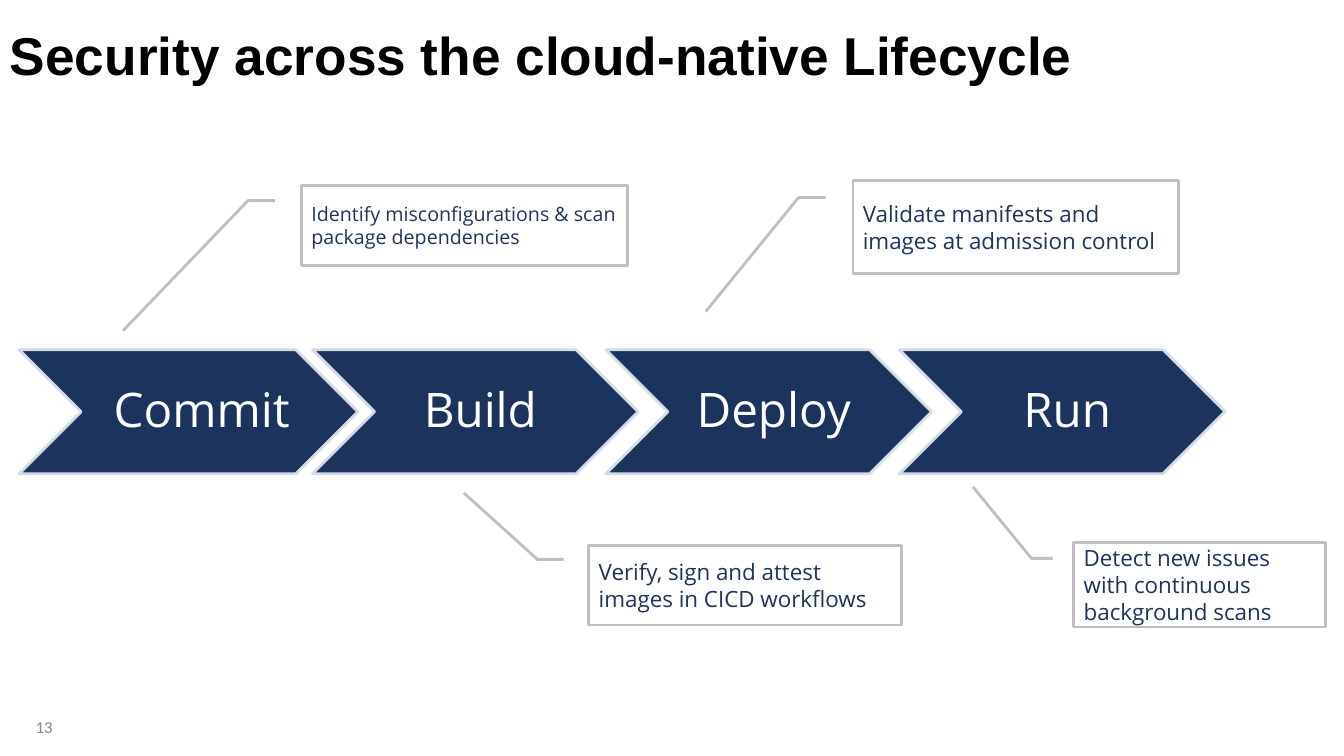
from pptx import Presentation
from pptx.dml.color import RGBColor
from pptx.enum.shapes import MSO_SHAPE
from pptx.enum.text import MSO_ANCHOR, PP_ALIGN
from pptx.util import Inches, Pt

TITLE = "Security across the cloud-native Lifecycle"
PAGE = "13"

# name, left, width, left text margin
STAGES = [
    ("Commit", 0.19, 3.36, 0.31),
    ("Build", 3.1, 3.23, 0.15),
    ("Deploy", 6.01, 3.23, 0.15),
    ("Run", 8.92, 3.23, 0.15),
]
STAGE_TOP, STAGE_HIGH = 3.47, 1.23

# text, size, filled, box (left, top, width, height), leader points
NOTES = [
    ("Identify misconfigurations & scan package dependencies", 14, True,
     (2.99, 1.84, 3.23, 0.79), [(2.73, 1.99), (2.46, 1.99), (1.22, 3.28)]),
    ("Verify, sign and attest images in CICD workflows", 16, False,
     (5.84, 5.41, 3.1, 0.79), [(5.59, 5.55), (5.33, 5.55), (4.6, 4.89)]),
    ("Validate manifests and images at admission control", 16, True,
     (8.46, 1.79, 3.23, 0.92), [(8.19, 1.96), (7.92, 1.96), (7, 3.09)]),
    ("Detect new issues with continuous background scans", 16, False,
     (10.65, 5.38, 2.5, 0.84), [(10.44, 5.54), (10.23, 5.54), (9.65, 4.83)]),
]

WHITE, NAVY, INK = "FFFFFF", "1B335D", "1E345D"
PALE, GRAY, BLACK, DIM = "D3DCE5", "BFBFBF", "000000", "888888"


def color(target, value):
    target.rgb = RGBColor.from_string(value)


def write(shape, text, size, face, ink, align=PP_ALIGN.LEFT, bold=False):
    frame = shape.text_frame
    frame.word_wrap = True
    frame.vertical_anchor = MSO_ANCHOR.MIDDLE
    line = frame.paragraphs[0]
    line.text = text
    line.alignment = align
    line.font.size, line.font.name, line.font.bold = Pt(size), face, bold
    color(line.font.color, ink)
    return line


def add_shape(slide, kind, box, fill, edge):
    shape = slide.shapes.add_shape(kind, *map(Inches, box))
    shape.shadow.inherit = False
    if fill:
        shape.fill.solid()
        color(shape.fill.fore_color, fill)
    else:
        shape.fill.background()
    color(shape.line.color, edge)
    shape.line.width = Pt(2)
    return shape


def add_stage(slide, name, left, width, margin):
    box = (left, STAGE_TOP, width, STAGE_HIGH)
    shape = add_shape(slide, MSO_SHAPE.CHEVRON, box, NAVY, PALE)
    shape.adjustments[0] = 0.5
    line = write(shape, name, 34, "Open Sans", WHITE, PP_ALIGN.CENTER)
    line.line_spacing = 0.9
    shape.text_frame.margin_left = Inches(margin)
    shape.text_frame.margin_right = Inches(0.05)


def add_note(slide, text, size, filled, box, points):
    """Add a boxed note whose leader line runs through the points."""
    fill = WHITE if filled else None
    shape = add_shape(slide, MSO_SHAPE.LINE_CALLOUT_2, box, fill, GRAY)
    left, top, width, height = box
    for i, (x, y) in enumerate(points):
        shape.adjustments[2 * i] = (y - top) / height
        shape.adjustments[2 * i + 1] = (x - left) / width
    write(shape, text, size, "Open Sans", INK)


def main():
    deck = Presentation()
    deck.slide_width, deck.slide_height = Inches(13.33), Inches(7.5)
    slide = deck.slides.add_slide(deck.slide_layouts[6])

    title = slide.shapes.add_textbox(*map(Inches, (0, -0.15, 11.5, 1.45)))
    line = write(title, TITLE, 38, "Arial", BLACK, bold=True)
    line.line_spacing = 0.9
    page = slide.shapes.add_textbox(*map(Inches, (0.14, 7.01, 0.48, 0.4)))
    write(page, PAGE, 12, "Calibri", DIM, PP_ALIGN.RIGHT)

    for stage in STAGES:
        add_stage(slide, *stage)
    for note in NOTES:
        add_note(slide, *note)
    deck.save("out.pptx")


if __name__ == "__main__":
    main()
